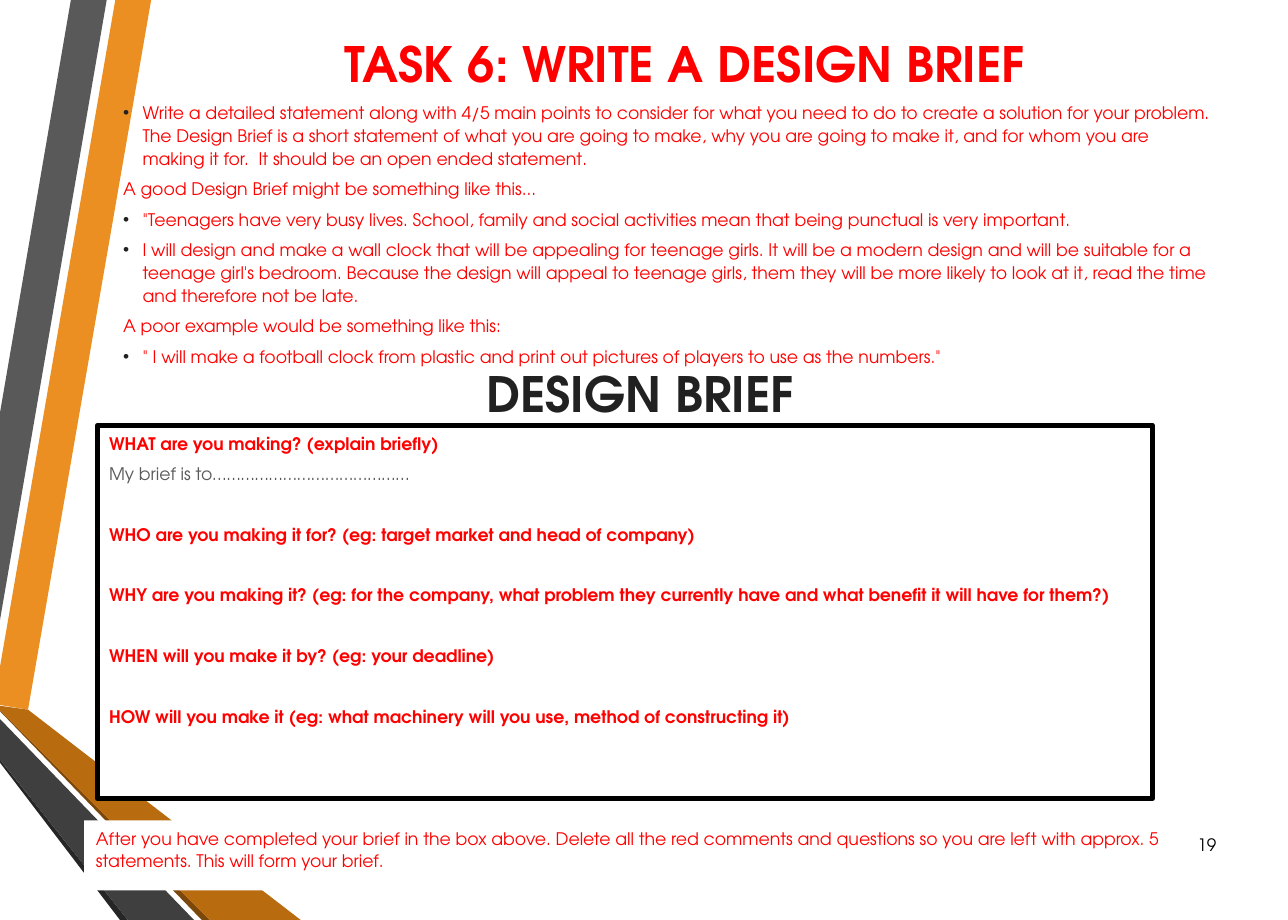
from dataclasses import dataclass

from lxml import etree
from pptx import Presentation
from pptx import util as u
from pptx.dml.color import RGBColor
from pptx.enum import shapes, text
from pptx.oxml.ns import qn

PX = 9144  # EMU in one px, 100 px to the inch
FONT = "TeX Gyre Adventor"

RED = RGBColor(0xFF, 0x00, 0x00)
BLACK = RGBColor(0x00, 0x00, 0x00)
WHITE = RGBColor(0xFF, 0xFF, 0xFF)
INK = RGBColor(0x21, 0x21, 0x21)
GREY = RGBColor(0x59, 0x59, 0x59)
CHARCOAL = RGBColor(0x3F, 0x3F, 0x3F)
DARK = RGBColor(0x26, 0x26, 0x26)
ORANGE = RGBColor(0xEB, 0x8F, 0x22)
RUST = RGBColor(0xB9, 0x6B, 0x10)
BROWN = RGBColor(0x7B, 0x47, 0x0B)

BODY_GAP = 7
ANSWER_GAP = 35  # leaves one empty line for an answer
BULLET_INDENT = 25


@dataclass
class Band:
    color: RGBColor
    points: list[tuple[int, int]]


@dataclass
class Line:
    words: str
    bullet: bool = False
    color: RGBColor = RED
    bold: bool = False
    before: int = BODY_GAP


BANDS = [
    Band(ORANGE, [(0, 856), (0, 905), (36, 911), (194, 0), (148, 0)]),
    Band(GREY, [(137, 0), (91, 0), (0, 530), (0, 796)]),
    Band(DARK, [(0, 975), (0, 979), (154, 1181), (164, 1181)]),
    Band(BROWN, [(0, 912), (0, 913), (259, 1181), (269, 1181)]),
    Band(RUST, [(0, 912), (269, 1181), (386, 1181), (36, 911), (0, 906)]),
    Band(CHARCOAL, [(0, 975), (164, 1181), (249, 1181), (0, 923)]),
]

INSTRUCTIONS = [
    Line("Write a detailed statement along with 4/5 main points to consider for what you need to do "
         "to create a solution for your problem. The Design Brief is a short statement of what you "
         "are going to make, why you are going to make it, and for whom you are making it for.  "
         "It should be an open ended statement.", bullet=True),
    Line("A good Design Brief might be something like this..."),
    Line('"Teenagers have very busy lives. School, family and social activities mean that being '
         'punctual is very important.', bullet=True),
    Line("I will design and make a wall clock that will be appealing for teenage girls. It will be a "
         "modern design and will be suitable for a teenage girl's bedroom. Because the design will "
         "appeal to teenage girls, them they will be more likely to look at it, read the time and "
         "therefore not be late.", bullet=True),
    Line("A poor example would be something like this:"),
    Line('" I will make a football clock from plastic and print out pictures of players to use as '
         'the numbers."', bullet=True),
]

QUESTIONS = [
    Line("WHAT are you making? (explain briefly)", bold=True),
    Line("My brief is to……………………………………", color=GREY),
    Line("WHO are you making it for? (eg: target market and head of company)",
         bold=True, before=ANSWER_GAP),
    Line("WHY are you making it? (eg: for the company, what problem they currently have and what "
         "benefit it will have for them?)", bold=True, before=ANSWER_GAP),
    Line("WHEN will you make it by? (eg: your deadline)", bold=True, before=ANSWER_GAP),
    Line("HOW will you make it (eg: what machinery will you use, method of constructing it)",
         bold=True, before=ANSWER_GAP),
]

CLOSING = [
    Line("After you have completed your brief in the box above. Delete all the red comments and "
         "questions so you are left with approx. 5 statements. This will form your brief."),
]


def add_band(page, band: Band) -> None:
    builder = page.shapes.build_freeform(*band.points[0], scale=PX)
    builder.add_line_segments(band.points[1:], close=True)
    shape = builder.convert_to_shape()
    shape.shadow.inherit = False
    shape.fill.solid()
    shape.fill.fore_color.rgb = band.color
    shape.line.fill.background()


def add_bullet(para) -> None:
    props = para._p.get_or_add_pPr()
    props.set("marL", str(BULLET_INDENT * PX))
    props.set("indent", str(-BULLET_INDENT * PX))
    color = etree.SubElement(props, qn("a:buClr"))
    etree.SubElement(color, qn("a:srgbClr"), val=str(INK))
    etree.SubElement(props, qn("a:buFont"), typeface="Arial")
    etree.SubElement(props, qn("a:buChar"), char="•")


def write(box, lines: list[Line], *, size: float = 16, spacing: float = 1.1,
          align=text.PP_ALIGN.LEFT, anchor=text.MSO_ANCHOR.TOP,
          inset: tuple[int, int] = (15, 7)) -> None:
    frame = box.text_frame
    frame.word_wrap = True
    frame.vertical_anchor = anchor
    frame.margin_left = frame.margin_right = inset[0] * PX
    frame.margin_top = frame.margin_bottom = inset[1] * PX
    for index, line in enumerate(lines):
        para = frame.add_paragraph() if index else frame.paragraphs[0]
        para.alignment = align
        para.line_spacing = spacing
        if index:
            para.space_before = u.Pt(line.before)
        if line.bullet:
            add_bullet(para)
        span = para.add_run()
        span.text = line.words
        span.font.name = FONT
        span.font.size = u.Pt(size)
        span.font.bold = line.bold
        span.font.color.rgb = line.color


def add_text(page, left: int, top: int, width: int, height: int, lines: list[Line], **style) -> None:
    box = page.shapes.add_textbox(left * PX, top * PX, width * PX, height * PX)
    write(box, lines, **style)


def add_panel(page, left: int, top: int, width: int, height: int, lines: list[Line],
              border: float = 0) -> None:
    """Draw a white rectangle with text; a border of 0 points means no outline."""
    panel = page.shapes.add_shape(shapes.MSO_SHAPE.RECTANGLE,
                                  left * PX, top * PX, width * PX, height * PX)
    panel.shadow.inherit = False
    panel.fill.solid()
    panel.fill.fore_color.rgb = WHITE
    if border:
        panel.line.color.rgb = BLACK
        panel.line.width = u.Pt(border)
    else:
        panel.line.fill.background()
    write(panel, lines)


def main() -> None:
    deck = Presentation()
    deck.slide_width, deck.slide_height = 1653 * PX, 1181 * PX
    page = deck.slides.add_slide(deck.slide_layouts[6])
    heading = {"size": 45, "spacing": 0.9, "align": text.PP_ALIGN.CENTER}

    for band in BANDS:
        add_band(page, band)
    add_text(page, 1496, 1053, 75, 63, [Line("19", color=BLACK)], size=15.8, spacing=1.0,
             align=text.PP_ALIGN.RIGHT, anchor=text.MSO_ANCHOR.MIDDLE, inset=(10, 5))
    add_text(page, 143, 122, 1427, 374, INSTRUCTIONS)
    add_text(page, 221, 45, 1315, 178, [Line("TASK 6: WRITE A DESIGN BRIEF", bold=True)], **heading)
    add_panel(page, 125, 546, 1354, 479, QUESTIONS, border=4.5)
    add_text(page, 164, 468, 1315, 104, [Line("DESIGN BRIEF", color=INK, bold=True)], **heading)
    add_panel(page, 108, 1053, 1427, 90, CLOSING)

    deck.save("out.pptx")


if __name__ == "__main__":
    main()
